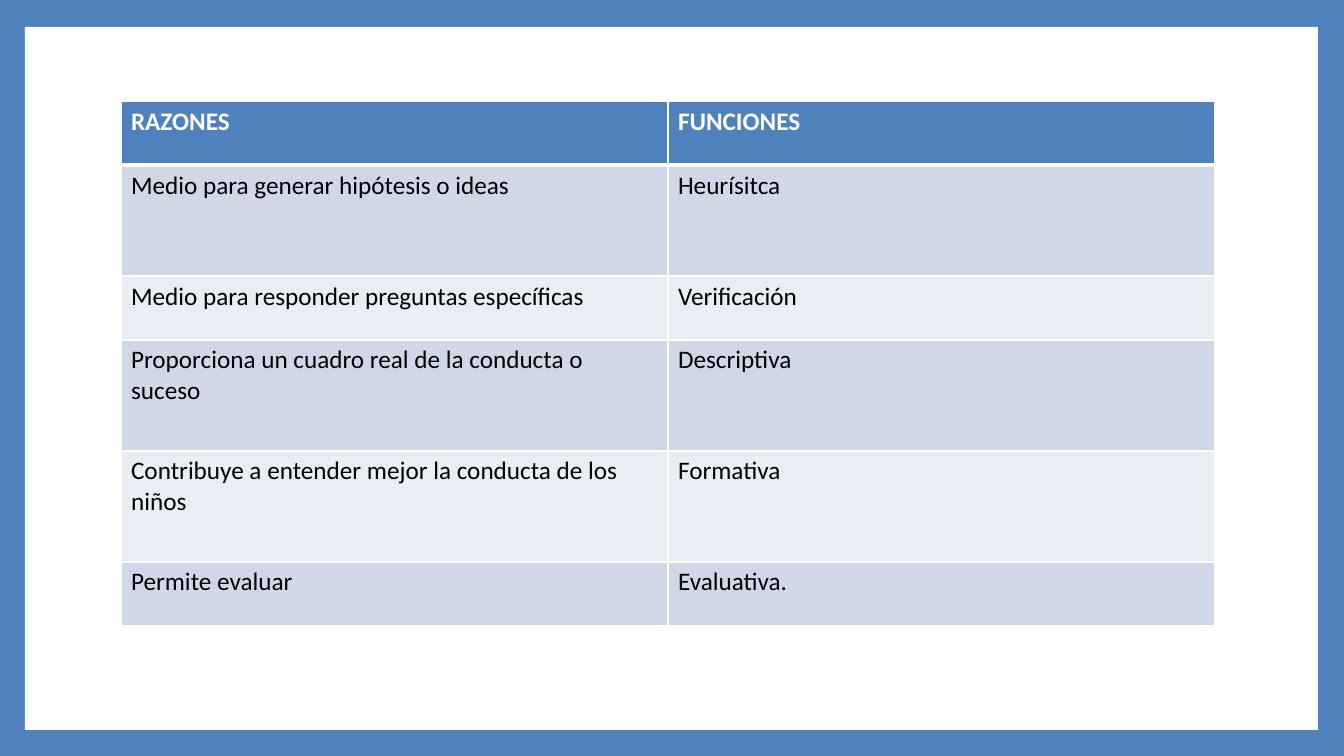
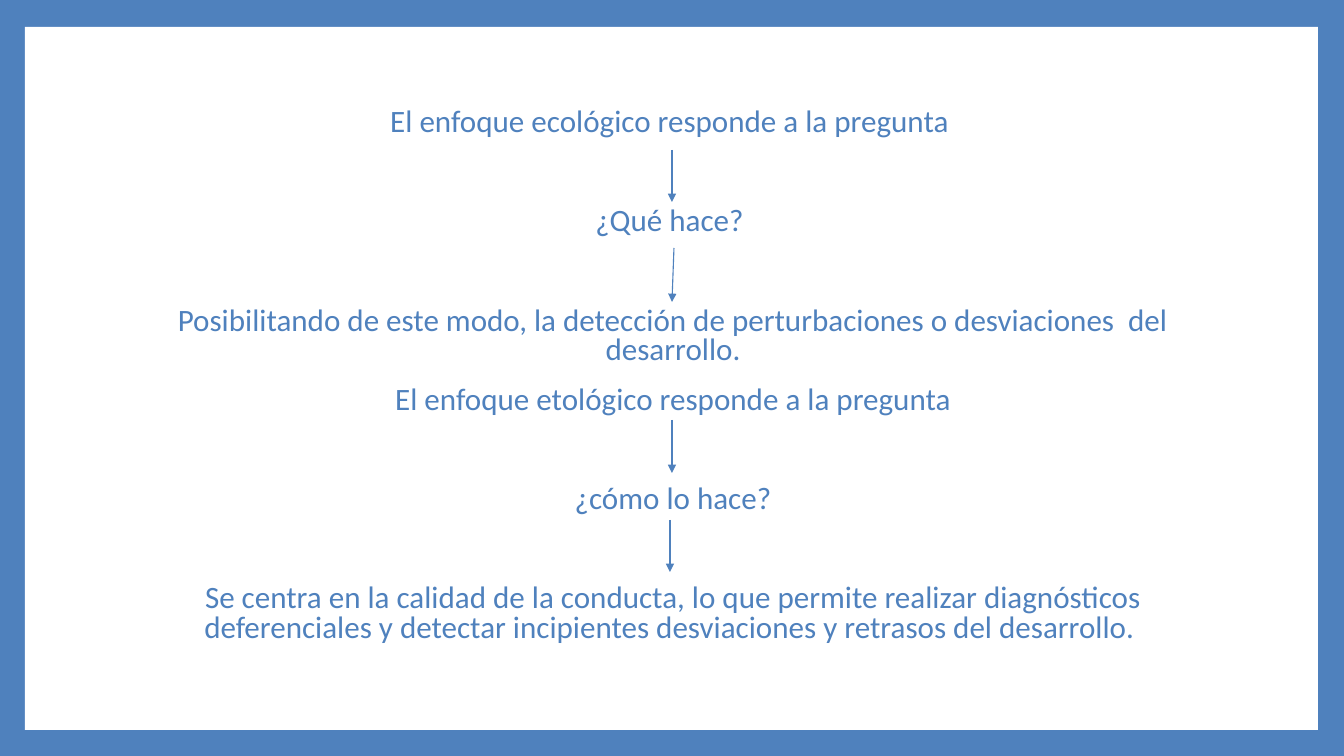
from lxml import etree
from pptx import Presentation
from pptx.dml.color import RGBColor
from pptx.enum.shapes import MSO_CONNECTOR, MSO_SHAPE
from pptx.enum.text import PP_ALIGN
from pptx.oxml.ns import qn
from pptx.util import Pt

RECTANGLE = MSO_SHAPE.RECTANGLE
STRAIGHT = MSO_CONNECTOR.STRAIGHT
CENTER = PP_ALIGN.CENTER

# Shared style
EMU_PER_PX = 914400 / 100.8
SLIDE_SIZE = (1344, 756)
PANEL = (25, 27, 1293, 703)
FONT = "Calibri"
COLORS = {"blue": "4F81BD", "white": "FFFFFF", "black": "000000",
          "band_dark": "D0D8E8", "band_light": "E9EDF4"}

# Slide 1: reasons and functions
REASONS = [
    ("RAZONES", "FUNCIONES"),
    ("Medio para generar hipótesis o ideas", "Heurísitca"),
    ("Medio para responder preguntas específicas", "Verificación"),
    ("Proporciona un cuadro real de la conducta o suceso", "Descriptiva"),
    ("Contribuye a entender mejor la conducta de los niños", "Formativa"),
    ("Permite evaluar", "Evaluativa."),
]
TABLE_ORIGIN = (121, 101)
COLUMN_WIDTH = 547
ROW_HEIGHTS = [64, 111, 64, 111, 111, 64]

# Slide 2: each statement with the space before it, in points
CLOSE, ARROW_GAP = 14, 49.5
STATEMENTS = [
    ("El enfoque ecológico responde a la pregunta ", 0),
    ("¿Qué hace? ", ARROW_GAP),
    ("Posibilitando de este modo, la detección de perturbaciones o "
     "desviaciones  del desarrollo.", ARROW_GAP),
    ("El enfoque etológico responde a la pregunta", CLOSE),
    ("¿cómo lo hace?", ARROW_GAP),
    ("Se centra en la calidad de la conducta, lo que permite realizar "
     "diagnósticos deferenciales y detectar incipientes desviaciones y "
     "retrasos del desarrollo. ", ARROW_GAP),
]
STATEMENTS_BOX = (126, 104, 1089, 568)
ARROWS = [(672, 150, 672, 202), (674, 248, 672, 302),
          (672, 420, 672, 473), (670, 520, 670, 572)]


def px(*lengths):
    return [round(length * EMU_PER_PX) for length in lengths]


def rgb(color):
    return RGBColor.from_string(COLORS[color])


def fill_with(fill, color):
    fill.solid()
    fill.fore_color.rgb = rgb(color)


def style_text(paragraph, size, color, bold=False):
    for run in paragraph.runs:
        run.font.name = FONT
        run.font.size = Pt(size)
        run.font.bold = bold
        run.font.color.rgb = rgb(color)


def new_slide(prs):
    """Blue slide with the white panel."""
    slide = prs.slides.add_slide(prs.slide_layouts[6])
    fill_with(slide.background.fill, "blue")
    panel = slide.shapes.add_shape(RECTANGLE, *px(*PANEL))
    panel.shadow.inherit = False
    fill_with(panel.fill, "white")
    panel.line.fill.background()
    return slide


def set_borders(cell, bottom=1, top=1):
    properties = cell._tc.get_or_add_tcPr()
    widths = [("a:lnL", 1), ("a:lnR", 1), ("a:lnT", top), ("a:lnB", bottom)]
    for position, (side, width) in enumerate(widths):
        border = etree.Element(qn(side), w=str(Pt(width)))
        solid = etree.SubElement(border, qn("a:solidFill"))
        etree.SubElement(solid, qn("a:srgbClr"), val=COLORS["white"])
        properties.insert(position, border)


def add_reasons_table(slide):
    width, height = COLUMN_WIDTH * len(REASONS[0]), sum(ROW_HEIGHTS)
    table = slide.shapes.add_table(
        len(REASONS), len(REASONS[0]),
        *px(*TABLE_ORIGIN, width, height)).table
    for column in table.columns:
        column.width = px(COLUMN_WIDTH)[0]
    for r, (texts, row_height) in enumerate(zip(REASONS, ROW_HEIGHTS)):
        table.rows[r].height = px(row_height)[0]
        header = r == 0
        band = "blue" if header else "band_dark" if r % 2 else "band_light"
        for c, text in enumerate(texts):
            cell = table.cell(r, c)
            cell.text_frame.text = text
            style_text(cell.text_frame.paragraphs[0], 18,
                       "white" if header else "black", bold=header)
            fill_with(cell.fill, band)
            set_borders(cell, bottom=3 if header else 1, top=3 if r == 1 else 1)


def add_statements(slide):
    frame = slide.shapes.add_textbox(*px(*STATEMENTS_BOX)).text_frame
    frame.word_wrap = True
    frame.margin_left = px(15)[0]
    frame.text = "\n".join(text for text, _ in STATEMENTS)
    for paragraph, (_, gap) in zip(frame.paragraphs, STATEMENTS):
        paragraph.alignment = CENTER
        paragraph.line_spacing = 0.8
        paragraph.space_before = Pt(gap)
        style_text(paragraph, 22.2, "blue")


def add_arrow(slide, ends):
    arrow = slide.shapes.add_connector(STRAIGHT, *px(*ends))
    arrow.line.color.rgb = rgb("blue")
    arrow.line.width = Pt(0.79)
    etree.SubElement(arrow.line._get_or_add_ln(), qn("a:tailEnd"),
                     type="triangle")
    etree.SubElement(arrow._element.spPr, qn("a:effectLst"))


def main():
    prs = Presentation()
    prs.slide_width, prs.slide_height = px(*SLIDE_SIZE)

    add_reasons_table(new_slide(prs))

    approaches = new_slide(prs)
    add_statements(approaches)
    for ends in ARROWS:
        add_arrow(approaches, ends)

    prs.save("out.pptx")


if __name__ == "__main__":
    main()
